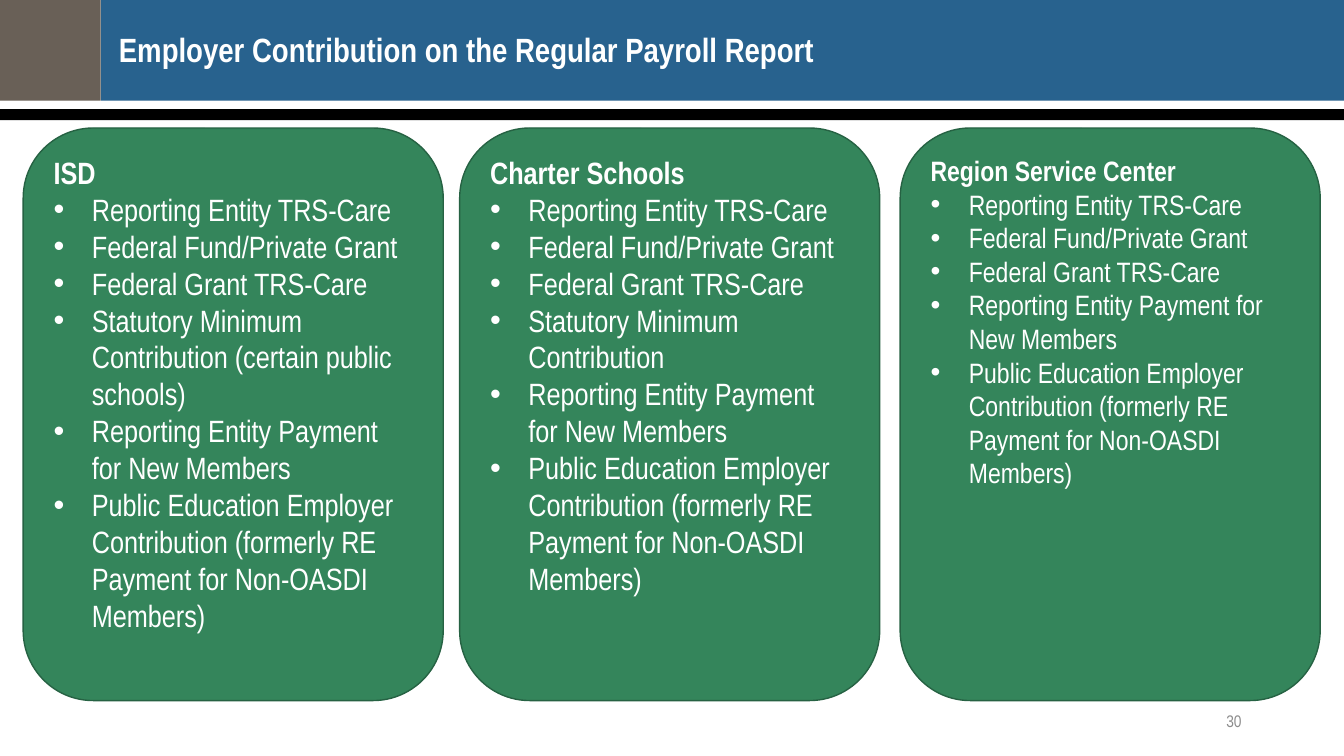
from lxml.etree import SubElement
from pptx import Presentation
from pptx.dml.color import RGBColor
from pptx.enum.shapes import MSO_SHAPE as Shape
from pptx.enum.text import MSO_ANCHOR as Anchor, PP_ALIGN as Align
from pptx.oxml.ns import qn
from pptx.util import Inches, Pt

COLORS = {
    "blue": "28628E", "taupe": "696057", "black": "000000", "white": "FFFFFF",
    "gray": "8C8C8C", "green": "34855B", "dark green": "266243",
}
COLUMNS, ROWS = 160, 90
CARD_TOP, CARD_WIDTH, CARD_HEIGHT = 15.24, 50, 68.16

TRS_ITEMS = [
    "Reporting Entity TRS-Care",
    "Federal Fund/Private Grant",
    "Federal Grant TRS-Care",
]
MEMBER_ITEMS = [
    "Reporting Entity Payment for New Members",
    "Public Education Employer Contribution "
    "(formerly RE Payment for Non-OASDI Members)",
]
# heading, left column, text size, items between the shared ones
CARDS = [
    ("ISD", 2.76, 22,
     ["Statutory Minimum Contribution (certain public schools)"]),
    ("Charter Schools", 54.72, 22, ["Statutory Minimum Contribution"]),
    ("Region Service Center", 107.16, 20, []),
]


class SlideBuilder:
    font_name = "Arial Narrow"

    def __init__(self, deck):
        self.cell_width = deck.slide_width / COLUMNS
        self.cell_height = deck.slide_height / ROWS
        self.page = deck.slides.add_slide(deck.slide_layouts[6])

    def place(self, column, row, width, height):
        """Turn grid columns and rows into slide lengths."""
        return (round(column * self.cell_width), round(row * self.cell_height),
                round(width * self.cell_width), round(height * self.cell_height))

    def panel(self, area, fill, line=None, kind=Shape.RECTANGLE):
        box = self.page.shapes.add_shape(kind, *self.place(*area))
        box.shadow.inherit = False
        box.fill.solid()
        box.fill.fore_color.rgb = RGBColor.from_string(COLORS[fill])
        if line:
            box.line.color.rgb = RGBColor.from_string(COLORS[line])
            box.line.width = Pt(1)
        else:
            box.line.fill.background()
        return box

    def span(self, para, words, size, color="white", bold=False):
        span = para.add_run()
        span.text = words
        span.font.name = self.font_name
        span.font.size = Pt(size)
        span.font.bold = bold
        span.font.color.rgb = RGBColor.from_string(COLORS[color])

    def text_frame(self, area):
        frame = self.page.shapes.add_textbox(*self.place(*area)).text_frame
        frame.word_wrap = True
        return frame

    def title(self, area, words):
        frame = self.text_frame(area)
        frame.margin_left = frame.margin_right = 0
        frame.margin_top = frame.margin_bottom = 0
        para = frame.paragraphs[0]
        para.line_spacing = 0.9
        self.span(para, words, 24, bold=True)

    def page_number(self, area, number):
        frame = self.text_frame(area)
        frame.vertical_anchor = Anchor.MIDDLE
        para = frame.paragraphs[0]
        para.alignment = Align.RIGHT
        self.span(para, number, 12, "gray")

    def bullet(self, para):
        properties = para._p.get_or_add_pPr()
        properties.set("marL", str(Inches(0.38)))
        properties.set("indent", str(Inches(-0.38)))
        SubElement(properties, qn("a:buFont"), typeface="Arial")
        SubElement(properties, qn("a:buChar"), char="•")

    def card(self, area, heading, items, size):
        box = self.panel(area, "green", "dark green", Shape.ROUNDED_RECTANGLE)
        frame = box.text_frame
        frame.word_wrap = True
        frame.vertical_anchor = Anchor.TOP
        para = frame.paragraphs[0]
        para.alignment = Align.LEFT
        self.span(para, heading, size, bold=True)
        for item in items:
            para = frame.add_paragraph()
            para.alignment = Align.LEFT
            self.bullet(para)
            self.span(para, item, size)


def main():
    deck = Presentation()
    deck.slide_width, deck.slide_height = Inches(13.33), Inches(7.5)
    slide = SlideBuilder(deck)
    slide.panel((12, 0, COLUMNS - 12, 12), "blue")
    slide.panel((0, 0, 12, 12), "taupe")
    slide.panel((0, 13, COLUMNS, 1.3), "black")
    slide.page_number((113, 83.4, 36, 4.8), "30")
    slide.title((14.16, 3.96, 149, 6.72),
                "Employer Contribution on the Regular Payroll Report")
    for heading, left, size, extra in CARDS:
        slide.card((left, CARD_TOP, CARD_WIDTH, CARD_HEIGHT), heading,
                   TRS_ITEMS + extra + MEMBER_ITEMS, size)
    deck.save("out.pptx")


if __name__ == "__main__":
    main()
